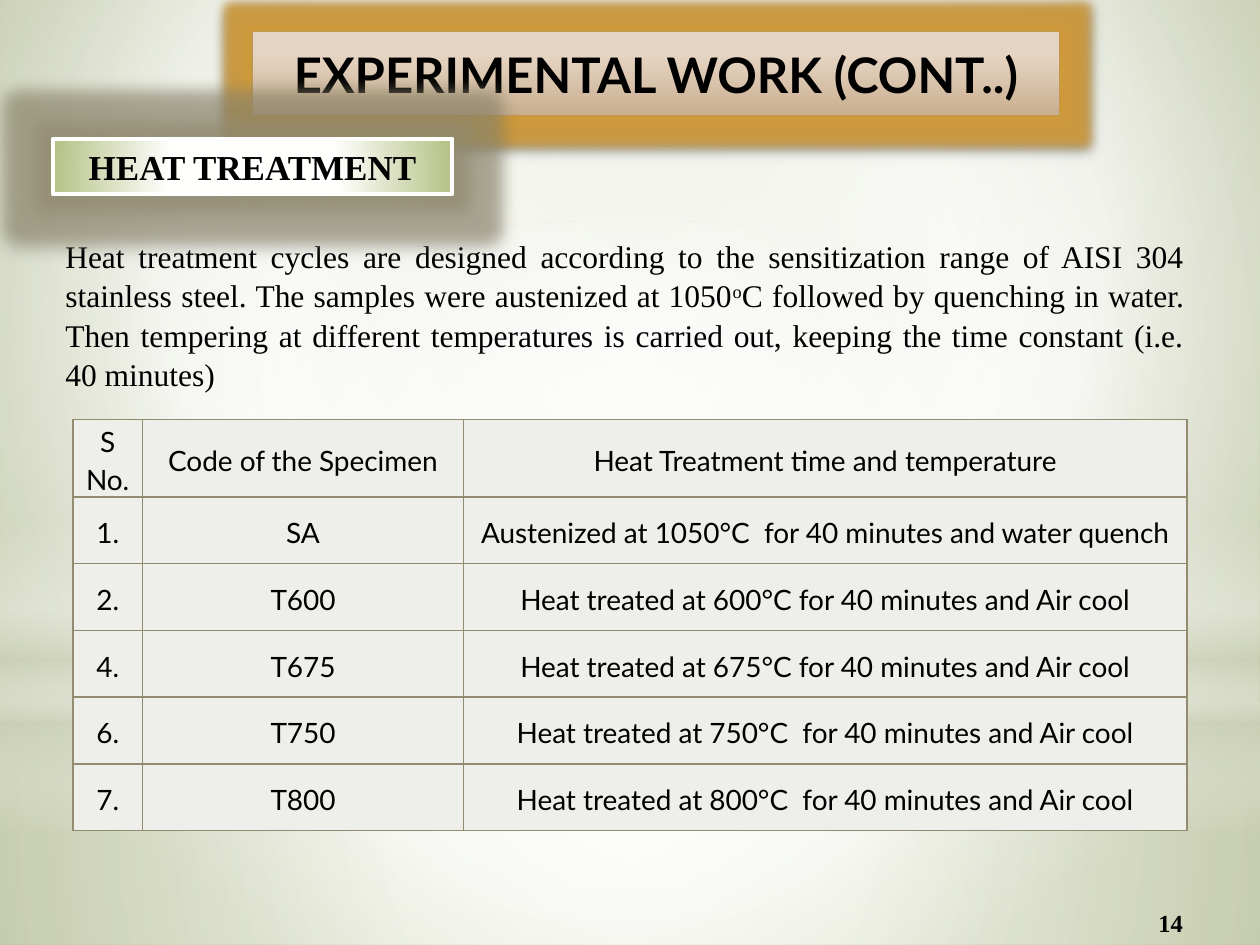
from pptx import Presentation
from pptx.dml.color import RGBColor
from pptx.enum.shapes import MSO_SHAPE as Preset
from pptx.enum.text import MSO_ANCHOR as Anchor, PP_ALIGN as Align
from pptx.oxml import parse_xml
from pptx.oxml.ns import nsdecls, qn
from pptx.util import Inches, Pt

SERIF, SANS = "Times New Roman", "Lato"


def color(code):
    return RGBColor.from_string(code)


def color_xml(code, opacity=100):
    return f'<a:srgbClr val="{code}"><a:alpha val="{opacity * 1000}"/></a:srgbClr>'


def element(tag, attributes, content):
    return parse_xml(f'<a:{tag} {nsdecls("a")} {attributes}>{content}</a:{tag}>')


def gradient(stops, angle=None, focus=(50, 50, 50, 50)):
    """Stops are (position, colour[, opacity]); without an angle it is circular."""
    stop_xml = "".join(f'<a:gs pos="{position * 1000}">{color_xml(*paint)}</a:gs>'
                       for position, *paint in stops)
    if angle is None:
        sides = " ".join(f'{side}="{share * 1000}"' for side, share in zip("ltrb", focus))
        direction = f'<a:path path="circle"><a:fillToRect {sides}/></a:path>'
    else:
        direction = f'<a:lin ang="{angle * 60000}" scaled="0"/>'
    return element("gradFill", 'rotWithShape="1"', f"<a:gsLst>{stop_xml}</a:gsLst>{direction}")


def put_gradient(fill, holder, paint):
    fill.background()
    holder.replace(holder.find(qn("a:noFill")), paint)


def write(paragraph, text, size=18, font=SERIF, bold=False, align=Align.CENTER, raised=False):
    paragraph.alignment = align
    run = paragraph.add_run()
    run.text = text
    run.font.size, run.font.name, run.font.bold = Pt(size), font, bold
    run.font.color.rgb = color("000000")
    if raised:
        run.font._element.set("baseline", "30000")


class SlideBuilder:
    """Places elements by percent of the slide's width and height."""
    cell_fill, border = "EEEEEB", "928B70"

    def __init__(self, presentation):
        self.width, self.height = presentation.slide_width, presentation.slide_height
        self.slide = presentation.slides.add_slide(presentation.slide_layouts[6])

    def area(self, left, top, width, height):
        return [int(share * length / 100) for share, length in
                zip((left, top, width, height), (self.width, self.height) * 2)]

    def background(self, paint):
        background = self.slide.background
        background.fill.background()
        put_gradient(background.fill, background._cSld.bg.bgPr, paint)

    def shape(self, area, paint, preset=Preset.RECTANGLE, line=None):
        shape = self.slide.shapes.add_shape(preset, *self.area(*area))
        shape.shadow.inherit = False
        put_gradient(shape.fill, shape._element.spPr, paint)
        if line:
            shape.line.color.rgb, shape.line.width = color(line[0]), Pt(line[1])
        else:
            shape.line.fill.background()
        return shape

    def banner(self, area, text, paint, line, glow, shadow, **style):
        shape = self.shape(area, paint, line=line)
        effects = shape._element.spPr.find(qn("a:effectLst"))
        radius, *glow_paint = glow
        opacity, distance = shadow
        effects.append(element("glow", f'rad="{Pt(radius)}"', color_xml(*glow_paint)))
        effects.append(element(
            "outerShdw", f'blurRad="{Pt(5)}" dist="{Pt(distance)}" dir="5400000" rotWithShape="0"',
            color_xml("000000", opacity)))
        shape.text_frame.vertical_anchor = Anchor.MIDDLE
        write(shape.text_frame.paragraphs[0], text, bold=True, **style)

    def text(self, area, runs, anchor=Anchor.TOP, top=0.05, spacing=1.0, **style):
        frame = self.slide.shapes.add_textbox(*self.area(*area)).text_frame
        frame.word_wrap, frame.vertical_anchor = True, anchor
        frame.margin_top = Inches(top)
        frame.paragraphs[0].line_spacing = spacing
        for text, raised in runs:
            write(frame.paragraphs[0], text, raised=raised, **style)

    def table(self, area, rows, widths, heights):
        table = self.slide.shapes.add_table(len(rows), len(widths), *self.area(*area)).table
        for column, width in zip(table.columns, widths):
            column.width = Inches(width)
        for row, height, texts in zip(table.rows, heights, rows):
            row.height = Inches(height)
            for cell, text in zip(row.cells, texts):
                self.cell(cell, text)

    def cell(self, cell, text):
        cell.fill.solid()
        cell.fill.fore_color.rgb = color(self.cell_fill)
        cell.vertical_anchor = Anchor.MIDDLE
        cell.margin_left = cell.margin_right = Inches(0.07)
        cell.margin_top = cell.margin_bottom = 0
        properties = cell._tc.get_or_add_tcPr()
        for index, side in enumerate("LRTB"):
            properties.insert(index, element(
                f"ln{side}", f'w="{Pt(1)}"',
                f"<a:solidFill>{color_xml(self.border)}</a:solidFill>"))
        paragraph = cell.text_frame.paragraphs[0]
        paragraph.line_spacing, paragraph.space_after = 1.15, Pt(10)
        write(paragraph, text, size=16, font=SANS)


def main():
    presentation = Presentation()
    presentation.slide_width, presentation.slide_height = Inches(10), Inches(7.5)
    builder = SlideBuilder(presentation)

    # Backdrop: soft green and white light
    white, green = "FFFFFF", "CCD1B9"
    builder.background(gradient([(0, "C8CFAC"), (60, white), (100, "AFBB84")],
                                focus=(20, 10, 20, 60)))
    builder.shape((0, 74.4, 100, 25.6),
                  gradient([(0, white, 91), (37, white, 76), (100, green, 79)]))
    builder.shape((0, 0, 100, 74.4),
                  gradient([(0, white, 89), (48, white, 62), (100, green, 79)]))
    builder.shape((0, 54.93, 100, 33.33),
                  gradient([(0, white, 0), (29, white, 30), (45, green, 40), (55, white, 26),
                            (65, green, 60), (100, white, 0)], angle=90))
    builder.shape((0, 23.33, 100, 74.4), gradient([(0, white), (56, white, 0)]),
                  preset=Preset.OVAL)

    # Explanation
    builder.text((4.2, 20.13, 90.8, 21.6), [
        ("Heat treatment cycles are designed according to the sensitization range of AISI 304 "
         "stainless steel. The samples were austenized at 1050", False),
        ("o", True),
        ("C followed by quenching in water. Then tempering at different temperatures is "
         "carried out, keeping the time constant (i.e. 40 minutes)", False),
    ], top=0.36, spacing=1.04, align=Align.JUSTIFY)

    # Title
    builder.banner((20, 3.33, 64.1, 8.93), "EXPERIMENTAL WORK (CONT..)",
                   gradient([(28, "E5D4C2"), (100, "C9AE8F")], angle=90),
                   line=("BF974D", 0.75), glow=(11, "CF9A3A", 90), shadow=(43, 2),
                   size=28, font=SANS)

    # Specimens
    treatments = [
        ("1.", "SA", "Austenized at 1050°C  for 40 minutes and water quench"),
        ("2.", "T600", "Heat treated at 600°C for 40 minutes and Air cool"),
        ("4.", "T675", "Heat treated at 675°C for 40 minutes and Air cool"),
        ("6.", "T750", "Heat treated at 750°C  for 40 minutes and Air cool"),
        ("7.", "T800", "Heat treated at 800°C  for 40 minutes and Air cool"),
    ]
    header = ("S No.", "Code of the Specimen", "Heat Treatment time and temperature")
    builder.table((5.8, 44.4, 88.3, 44.4), [header] + treatments,
                  widths=(0.55, 2.55, 5.74), heights=[0.59] + [0.53] * len(treatments))

    # Section heading
    builder.banner((4.2, 14.67, 31.7, 5.87), "HEAT TREATMENT",
                   gradient([(0, white), (42, "FFFFFE"), (100, "B4C184")],
                            focus=(24, 44, 24, 12)),
                   line=(white, 2.25), glow=(18, "928B70", 65), shadow=(20, 4), size=20)

    # Slide number
    builder.text((85.8, 95.47, 14.2, 4.27), [("14", False)], anchor=Anchor.MIDDLE,
                 size=14, bold=True)

    presentation.save("out.pptx")


if __name__ == "__main__":
    main()
